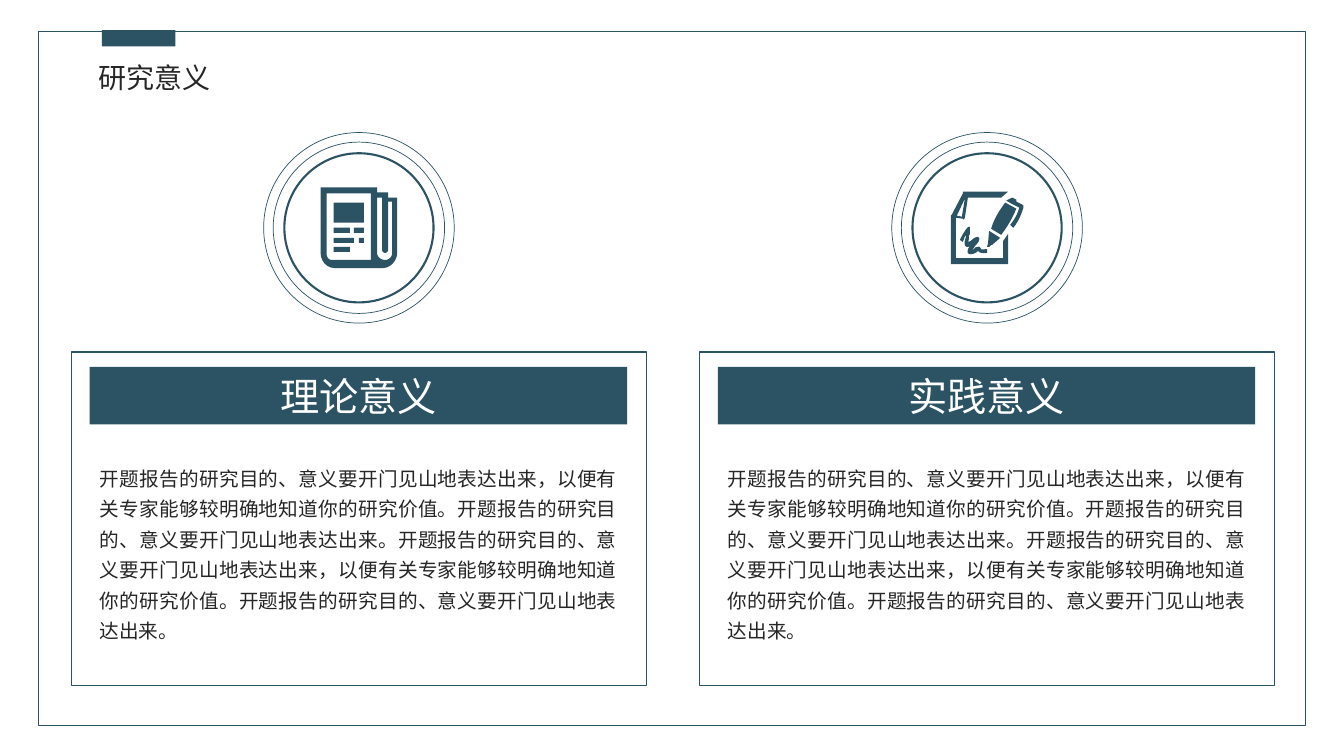
from dataclasses import dataclass

from lxml.etree import SubElement
from pptx import Presentation
from pptx.dml.color import RGBColor
from pptx.enum.shapes import MSO_SHAPE
from pptx.enum.text import MSO_ANCHOR, MSO_AUTO_SIZE, PP_ALIGN
from pptx.oxml.ns import qn
from pptx.shapes.autoshape import Shape
from pptx.shapes.shapetree import SlideShapes
from pptx.text.text import TextFrame
from pptx.util import Inches, Pt

TEAL = RGBColor(0x2C, 0x53, 0x64)
DARK = RGBColor(0x26, 0x26, 0x26)
WHITE = RGBColor(0xFF, 0xFF, 0xFF)
FONT = "Noto Sans CJK SC"
STEPS = 6

AIM = "开题报告的研究目的、意义要开门见山地表达出来"
VALUE = "，以便有关专家能够较明确地知道你的研究价值。"
BODY = f"{AIM}{VALUE}{AIM}。{AIM}{VALUE}{AIM}。"

# A contour step is a point (x, y) or a curve (x1, y1, x2, y2, x, y).
Step = tuple[float, ...]
Outline = list[Step]


def block(left: float, top: float, right: float, low: float) -> Outline:
    return [(left, top), (right, top), (right, low), (left, low)]


PAPER: list[Outline] = [
    [(3.8, 2.66), (3.32, 2.66), (3.24, 2.66, 3.18, 2.59, 3.18, 2.51), (3.18, 1.86),
     (3.74, 1.86), (3.74, 1.91), (3.85, 1.91), (3.85, 1.96), (3.94, 1.96),
     (3.94, 2.51), (3.94, 2.59, 3.87, 2.66, 3.8, 2.66)],
    [(3.68, 1.92), (3.24, 1.92), (3.24, 2.52), (3.24, 2.55, 3.26, 2.58, 3.29, 2.58),
     (3.68, 2.58)],
    [(3.89, 2), (3.85, 2), (3.85, 2.48), (3.85, 2.5, 3.83, 2.51, 3.82, 2.51),
     (3.81, 2.51, 3.79, 2.5, 3.79, 2.48), (3.79, 1.96), (3.74, 1.96), (3.74, 2.51),
     (3.74, 2.55, 3.78, 2.58, 3.82, 2.58), (3.86, 2.58, 3.89, 2.55, 3.89, 2.51)],
    block(3.31, 2.45, 3.47, 2.5),
    block(3.31, 2.36, 3.51, 2.41),
    block(3.56, 2.36, 3.61, 2.41),
    block(3.51, 2.26, 3.61, 2.31),
    block(3.31, 2.01, 3.61, 2.21),
    block(3.31, 2.26, 3.47, 2.31),
]
PEN: list[Outline] = [
    [(9.57, 1.9), (10, 1.9), (9.93, 1.96), (9.6, 1.96), (9.57, 2.16), (9.56, 2.18),
     (9.55, 2.17), (9.48, 2.16), (9.48, 2.56), (9.95, 2.56), (9.95, 2.39), (10, 2.32),
     (10, 2.62), (9.43, 2.62), (9.43, 2.14), (9.44, 2.13), (9.55, 1.92), (9.55, 1.9)],
    [(9.52, 2.38), (9.55, 2.4), (9.55, 2.4, 9.58, 2.31, 9.58, 2.34),
     (9.58, 2.37, 9.56, 2.4, 9.57, 2.43), (9.57, 2.44, 9.58, 2.45, 9.6, 2.45),
     (9.61, 2.45, 9.62, 2.44, 9.63, 2.44), (9.61, 2.45, 9.6, 2.47, 9.6, 2.48),
     (9.59, 2.5, 9.6, 2.52, 9.62, 2.52), (9.64, 2.53, 9.67, 2.51, 9.69, 2.5),
     (9.7, 2.49), (9.72, 2.52, 9.79, 2.51, 9.79, 2.51), (9.79, 2.47),
     (9.79, 2.47, 9.73, 2.48, 9.73, 2.47), (9.72, 2.45, 9.71, 2.44, 9.7, 2.45),
     (9.69, 2.45, 9.68, 2.45, 9.67, 2.46), (9.66, 2.47, 9.65, 2.48, 9.64, 2.48),
     (9.65, 2.47, 9.66, 2.46, 9.67, 2.44), (9.69, 2.42, 9.71, 2.4, 9.71, 2.38),
     (9.72, 2.37, 9.71, 2.36, 9.7, 2.35), (9.68, 2.35, 9.66, 2.36, 9.64, 2.38),
     (9.63, 2.39, 9.61, 2.4, 9.6, 2.4), (9.61, 2.39, 9.61, 2.36, 9.61, 2.34),
     (9.62, 2.33, 9.62, 2.31, 9.62, 2.3), (9.64, 2.14, 9.52, 2.38, 9.52, 2.38)],
    [(9.57, 1.97), (9.49, 2.14), (9.54, 2.15)],
    [(9.81, 2.29), (9.8, 2.41), (9.79, 2.45), (9.81, 2.45), (9.83, 2.43), (9.84, 2.43),
     (9.92, 2.36)],
    [(10.08, 2), (10.08, 1.98), (10.04, 1.96), (9.98, 1.99), (10.03, 2.02),
     (10.09, 2.05), (10.11, 2.06), (10.09, 2.13, 10.06, 2.18, 10.02, 2.23),
     (10.05, 2.26), (10.1, 2.2, 10.13, 2.13, 10.15, 2.06), (10.15, 2.04),
     (10.14, 2.03)],
    [(9.97, 2.01), (9.91, 2.09, 9.86, 2.17, 9.83, 2.27), (9.93, 2.33),
     (9.99, 2.25, 10.04, 2.17, 10.08, 2.07)],
]


@dataclass
class Panel:
    left: float
    head: str
    icon: list[Outline]


@dataclass
class Ring:
    size: float
    width: float


PANELS = [Panel(0.71, "理论意义", PAPER), Panel(6.94, "实践意义", PEN)]
RINGS = [Ring(1.48, 1.5), Ring(1.7, 0.5), Ring(1.89, 0.5)]


def paint(shape: Shape, fill: RGBColor | None, width: float = 0) -> None:
    """Fill and outline a shape; no fill or zero width leaves that part clear."""
    shape.shadow.inherit = False
    if fill is None:
        shape.fill.background()
    else:
        shape.fill.solid()
        shape.fill.fore_color.rgb = fill
    if width:
        shape.line.color.rgb = TEAL
        shape.line.width = Pt(width)
    else:
        shape.line.fill.background()


def draw(shapes: SlideShapes, kind: MSO_SHAPE, spot: tuple[float, ...],
         fill: RGBColor | None, width: float = 0) -> Shape:
    shape = shapes.add_shape(kind, *map(Inches, spot))
    paint(shape, fill, width)
    return shape


def write(frame: TextFrame, text: str, size: float, color: RGBColor,
          form: dict, para: dict) -> None:
    frame.text = text
    line = frame.paragraphs[0]
    font = line.runs[0].font
    looks = {"name": FONT, "size": Pt(size), "bold": False}
    for item, values in ((frame, form), (line, para), (font, looks)):
        for key, value in values.items():
            setattr(item, key, value)
    font.color.rgb = color
    SubElement(line.runs[0]._r.get_or_add_rPr(), qn("a:ea"), typeface=FONT)


def trace(outline: Outline) -> list[tuple[int, int]]:
    """Turn a contour into points, sampling its Bezier curves."""
    points = [outline[0]]
    for step in outline[1:]:
        if len(step) == 2:
            points.append(step)
            continue
        ends = [points[-1], step[:2], step[2:4], step[4:]]
        for i in range(1, STEPS + 1):
            t = i / STEPS
            parts = ((1 - t) ** 3, 3 * t * (1 - t) ** 2, 3 * t * t * (1 - t), t ** 3)
            points.append(tuple(sum(w * p[axis] for w, p in zip(parts, ends))
                                for axis in (0, 1)))
    return [(Inches(x), Inches(y)) for x, y in points]


def add_icon(shapes: SlideShapes, icon: list[Outline]) -> None:
    paths = [trace(outline) for outline in icon]
    pen = shapes.build_freeform(*paths[0][0])
    for points in paths:
        pen.move_to(*points[0])
        pen.add_line_segments(points[1:], close=True)
    paint(pen.convert_to_shape(), TEAL)


def add_panel(shapes: SlideShapes, panel: Panel) -> None:
    inner = panel.left + 0.18
    draw(shapes, MSO_SHAPE.RECTANGLE, (panel.left, 3.49, 5.7, 3.31), None, 1)
    bar = draw(shapes, MSO_SHAPE.RECTANGLE, (inner, 3.64, 5.33, 0.57), TEAL)
    write(bar.text_frame, panel.head, 28, WHITE,
          {"vertical_anchor": MSO_ANCHOR.MIDDLE}, {"alignment": PP_ALIGN.CENTER})
    note = shapes.add_textbox(*map(Inches, (inner, 4.51, 5.33, 1.93)))
    write(note.text_frame, BODY, 14, DARK,
          {"word_wrap": True, "auto_size": MSO_AUTO_SIZE.SHAPE_TO_FIT_TEXT},
          {"alignment": PP_ALIGN.JUSTIFY, "line_spacing": 1.3})
    add_icon(shapes, panel.icon)
    for ring in RINGS:
        spot = (panel.left + 2.85 - ring.size / 2, 2.26 - ring.size / 2,
                ring.size, ring.size)
        draw(shapes, MSO_SHAPE.OVAL, spot, None, ring.width)


def main() -> None:
    deck = Presentation()
    deck.slide_width, deck.slide_height = Inches(13.33), Inches(7.5)
    shapes = deck.slides.add_slide(deck.slide_layouts[5]).shapes
    draw(shapes, MSO_SHAPE.RECTANGLE, (0.38, 0.31, 12.57, 6.89), None, 1)
    draw(shapes, MSO_SHAPE.RECTANGLE, (1.01, 0.3, 0.73, 0.16), TEAL)
    title = shapes.title
    spot = {"left": 0.98, "top": 0.55, "width": 1.84, "height": 0.44}
    for key, value in spot.items():
        setattr(title, key, Inches(value))
    write(title.text_frame, "研究意义", 20, DARK,
          {"margin_left": 0, "vertical_anchor": MSO_ANCHOR.TOP, "word_wrap": True,
           "auto_size": MSO_AUTO_SIZE.SHAPE_TO_FIT_TEXT},
          {"alignment": PP_ALIGN.JUSTIFY})
    for panel in PANELS:
        add_panel(shapes, panel)
    deck.save("out.pptx")


if __name__ == "__main__":
    main()
